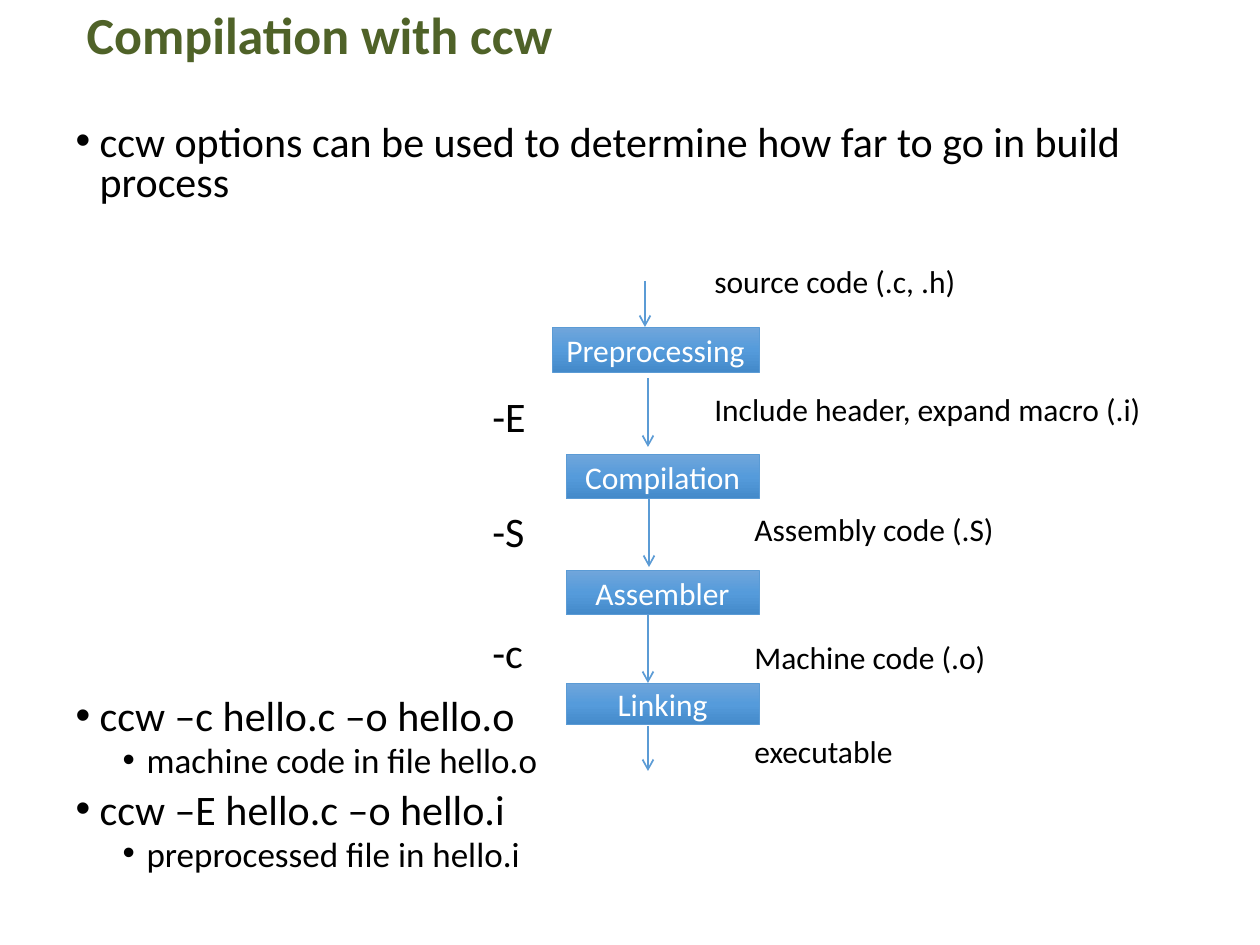
from copy import deepcopy

from lxml.etree import SubElement
from pptx import Presentation
from pptx.dml.color import RGBColor
from pptx.enum.shapes import MSO_CONNECTOR, MSO_SHAPE
from pptx.enum.text import MSO_ANCHOR, MSO_AUTO_SIZE, PP_ALIGN
from pptx.oxml.ns import qn
from pptx.util import Emu, Inches, Pt

GREEN = RGBColor(0x4F, 0x62, 0x28)
BLACK = RGBColor(0, 0, 0)
WHITE = RGBColor(0xFF, 0xFF, 0xFF)
BLUE = RGBColor(0x5B, 0x9B, 0xD5)
BOX_GRADIENT = [
    (0, RGBColor(0x71, 0xA6, 0xDB)),
    (0.5, RGBColor(0x55, 0x9B, 0xDB)),
    (1, RGBColor(0x44, 0x8A, 0xCA)),
]


def px(*lengths):
    return [Emu(round(length * 914400 / 126)) for length in lengths]


def set_font(paragraph, size, color, bold=False):
    font = paragraph.font
    font.name, font.size, font.bold = "Calibri", Pt(size), bold
    font.color.rgb = color


presentation = Presentation()
presentation.slide_width, presentation.slide_height = Inches(10), Inches(7.5)
slide = presentation.slides.add_slide(presentation.slide_layouts[1])

# Title
title = slide.shapes.title
title.left, title.top, title.width, title.height = px(74, 5, 1134, 66)
title.text_frame.text = "Compilation with ccw"
title.text_frame.auto_size = MSO_AUTO_SIZE.NONE
title.text_frame.vertical_anchor = MSO_ANCHOR.MIDDLE
paragraph = title.text_frame.paragraphs[0]
paragraph.alignment = PP_ALIGN.LEFT
paragraph.line_spacing = 0.9
set_font(paragraph, 29.7, GREEN, bold=True)

# Bullet list: text, level, space before (the large one leaves room for the diagram)
bullets = [
    ("ccw options can be used to determine how far to go in build process", 0, 7.5),
    ("ccw –c hello.c –o hello.o", 0, 282),
    ("machine code in file hello.o", 1, 3.8),
    ("ccw –E hello.c –o hello.i", 0, 7.5),
    ("preprocessed file in hello.i", 1, 3.8),
]
body = slide.placeholders[1]
body.left, body.top, body.width, body.height = px(63, 119, 1134, 826)
body.text_frame.text = "\n".join(text for text, _, _ in bullets)
body.text_frame.auto_size = MSO_AUTO_SIZE.NONE
for paragraph, (_, level, space) in zip(body.text_frame.paragraphs, bullets):
    paragraph.level = level
    paragraph.line_spacing = 0.8
    paragraph.space_before = Pt(space)
    set_font(paragraph, 20 if level else 24, BLACK)
    properties = paragraph._p.get_or_add_pPr()
    indent, hanging = px(71 if level else 24, -24)
    properties.set("marL", str(indent))
    properties.set("indent", str(hanging))
    SubElement(properties, qn("a:buFont")).set("typeface", "Arial")
    SubElement(properties, qn("a:buChar")).set("char", "•")
    # Bullets must come before the default run properties
    properties.append(properties.find(qn("a:defRPr")))

# Build stages: text, left, top, height; all end at the same right edge
STAGE_RIGHT = 759
stages = [
    ("Preprocessing", 552, 327, 45),
    ("Compilation", 566, 454, 45),
    ("Assembler", 566, 570, 45),
    ("Linking", 566, 683, 42),
]
for text, left, top, height in stages:
    box = slide.shapes.add_shape(
        MSO_SHAPE.RECTANGLE, *px(left, top, STAGE_RIGHT - left, height))
    box.shadow.inherit = False
    box.fill.gradient()
    box.fill.gradient_angle = 270
    first_stop = box._element.spPr.find(".//" + qn("a:gs"))
    first_stop.addnext(deepcopy(first_stop))
    for stop, (position, color) in zip(box.fill.gradient_stops, BOX_GRADIENT):
        stop.position = position
        stop.color.rgb = color
    box.line.color.rgb = BLUE
    box.line.width = Pt(0.5)
    box.text_frame.text = text
    box.text_frame.vertical_anchor = MSO_ANCHOR.MIDDLE
    paragraph = box.text_frame.paragraphs[0]
    paragraph.alignment = PP_ALIGN.CENTER
    set_font(paragraph, 18, WHITE)

# Arrows between the stages: x, top, bottom
arrows = [(645, 281, 327), (648, 378, 447), (649, 499, 567),
          (648, 615, 683), (648, 726, 771)]
for x, top, bottom in arrows:
    arrow = slide.shapes.add_connector(MSO_CONNECTOR.STRAIGHT, *px(x, top, x, bottom))
    arrow.line.color.rgb = BLUE
    arrow.line.width = Pt(1)
    SubElement(arrow.line._get_or_add_ln(), qn("a:tailEnd")).set("type", "arrow")
    SubElement(arrow._element.spPr, qn("a:effectLst"))

# File labels on the right, compiler options on the left: text, left, top, width, height, size
labels = [
    ("source code (.c, .h)", 702, 256, 377, 50, 18),
    ("Include header, expand macro (.i)", 702, 384, 467, 50, 18),
    ("Assembly code (.S)", 742, 504, 282, 50, 18),
    ("Machine code (.o)", 742, 632, 301, 50, 18),
    ("executable", 742, 726, 365, 50, 18),
    ("-E", 480, 384, 86, 63, 24),
    ("-S", 480, 499, 73, 63, 24),
    ("-c", 480, 620, 73, 63, 24),
]
for text, left, top, width, height, size in labels:
    label = slide.shapes.add_textbox(*px(left, top, width, height))
    label.text_frame.word_wrap = True
    label.text_frame.auto_size = MSO_AUTO_SIZE.SHAPE_TO_FIT_TEXT
    label.text_frame.text = text
    set_font(label.text_frame.paragraphs[0], size, BLACK)

presentation.save("out.pptx")
